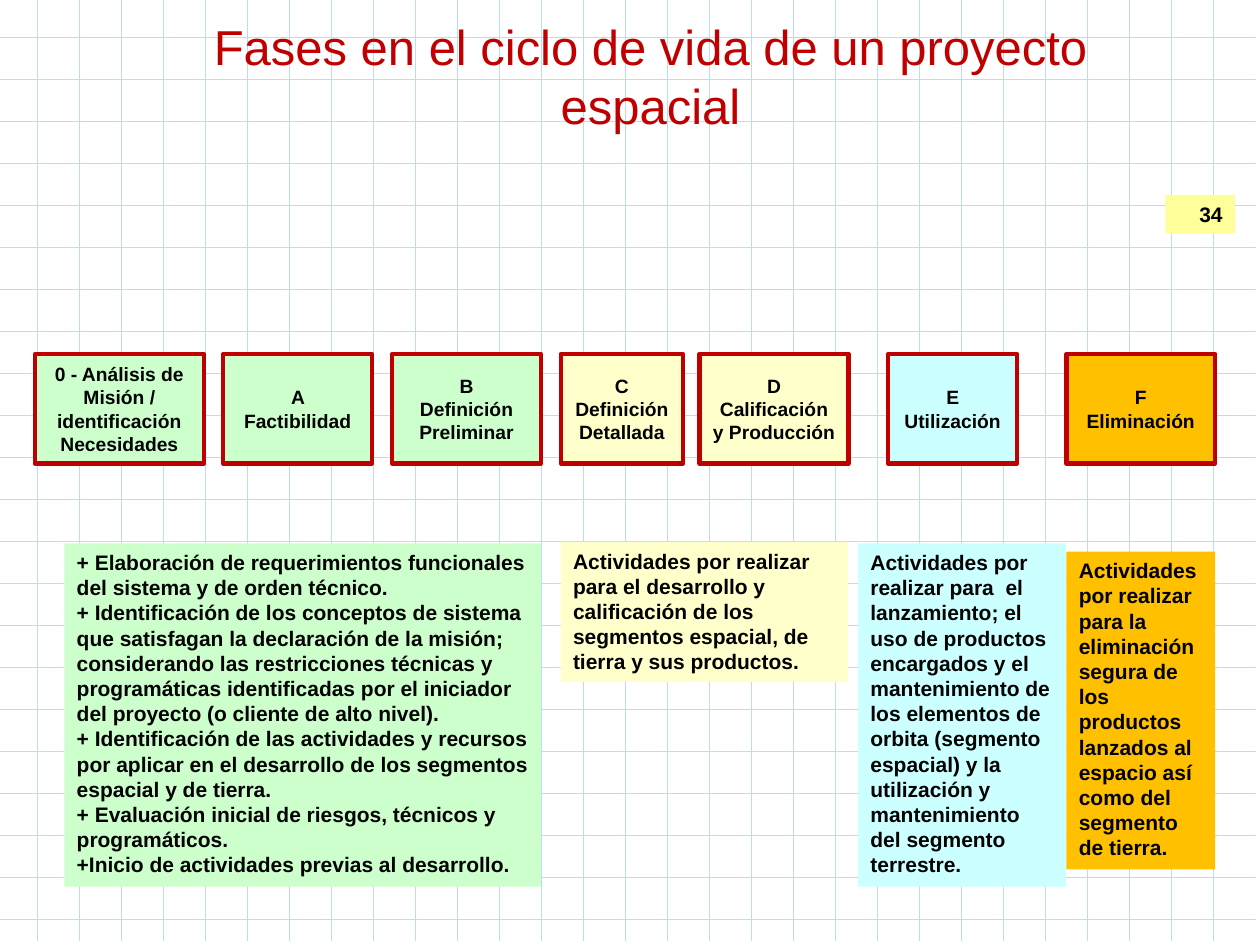
from pptx import Presentation
from pptx.dml.color import RGBColor
from pptx.enum import dml, shapes, text
from pptx.oxml.ns import qn
from pptx.util import Pt
from lxml import etree

WIDTH, HEIGHT = 720, 540
GREEN, CREAM, CYAN, ORANGE = "CCFFCC", "FFFFCC", "CCFFFF", "FFC000"
RED, BLACK, YELLOW, GRID = "C00000", "000000", "FFFF99", "BBE0E3"

TITLE = "Fases en el ciclo de vida de un proyecto espacial"
PAGE = "34"

# Phases: left, width, fill, paragraphs
PHASE_TOP, PHASE_HEIGHT = 202.3, 62.6
PHASES = [
    (20, 96.5, GREEN, ["0 ‐ Análisis de Misión / identificación Necesidades"]),
    (127.6, 85, GREEN, ["A Factibilidad"]),
    (224.1, 85, GREEN, ["B", "Definición Preliminar"]),
    (320.4, 70, CREAM, ["C Definición Detallada"]),
    (399.8, 85, CREAM, ["D Calificación y Producción"]),
    (507.6, 73.7, CYAN, ["E Utilización"]),
    (609.4, 85, ORANGE, ["F Eliminación"]),
]

# Activities: left, top, width, height, fill, paragraphs
ACTIVITIES = [
    (36.8, 310.5, 272.3, 196.2, GREEN, [
        "+ Elaboración de requerimientos funcionales del sistema y de orden técnico.",
        "+ Identificación de los conceptos de sistema que satisfagan la declaración "
        "de la misión; considerando las restricciones técnicas y programáticas "
        "identificadas por el iniciador del proyecto (o cliente de alto nivel).",
        "+ Identificación de las actividades y recursos por aplicar en el desarrollo "
        "de los segmentos espacial y de tierra.",
        "+ Evaluación inicial de riesgos, técnicos y programáticos.",
        "+Inicio de actividades previas al desarrollo.",
    ]),
    (320.4, 309.7, 164.3, 79.9, CREAM, [
        "Actividades por realizar para el desarrollo y calificación de los segmentos "
        "espacial, de tierra y sus productos.",
    ]),
    (490.3, 310.5, 118.8, 196.2, CYAN, [
        "Actividades por realizar para  el lanzamiento; el uso de productos encargados "
        "y el mantenimiento de los elementos de orbita (segmento espacial) y la "
        "utilización y mantenimiento del segmento terrestre.",
    ]),
    (609.4, 315.2, 85, 181.6, ORANGE, [
        "Actividades por realizar para la eliminación segura de los productos lanzados "
        "al espacio así como del segmento de tierra.",
    ]),
]

# Grid: first line, step and overhang to the upper left
GRID_START, GRID_STEP, GRID_SHIFT = 21.4, 24, -2.6

prs = Presentation()
prs.slide_width, prs.slide_height = Pt(WIDTH), Pt(HEIGHT)
s = prs.slides.add_slide(prs.slide_layouts[6])


def rgb(value):
    return RGBColor.from_string(value)


def write(sp, lines, size, color=BLACK, bold=True, align="LEFT", anchor="TOP"):
    tf = sp.text_frame
    tf.word_wrap = True
    tf.vertical_anchor = getattr(text.MSO_ANCHOR, anchor)
    for i, line in enumerate(lines):
        p = tf.paragraphs[0] if i == 0 else tf.add_paragraph()
        p.alignment = getattr(text.PP_ALIGN, align)
        r = p.add_run()
        r.text = line
        for name, value in {"name": "Arial", "size": Pt(size), "bold": bold}.items():
            setattr(r.font, name, value)
        r.font.color.rgb = rgb(color)


def add_box(kind, left, top, width, height, fill, border=None):
    sp = s.shapes.add_shape(kind, Pt(left), Pt(top), Pt(width), Pt(height))
    sp.shadow.inherit = False
    sp.fill.solid()
    sp.fill.fore_color.rgb = rgb(fill)
    if border:
        sp.line.color.rgb = rgb(border)
        sp.line.width = Pt(2.5)
    else:
        sp.line.fill.background()
    return sp


def add_grid_line(x1, y1, x2, y2):
    c = s.shapes.add_connector(shapes.MSO_CONNECTOR.STRAIGHT,
                               Pt(x1), Pt(y1), Pt(x2), Pt(y2))
    c.line.color.rgb = rgb(GRID)
    c.line.width = Pt(0.25)
    c.line.dash_style = dml.MSO_LINE.ROUND_DOT
    etree.SubElement(c._element.spPr, qn("a:effectLst"))


# Background grid
for row in range(22):
    y = GRID_START + row * GRID_STEP
    add_grid_line(GRID_SHIFT, y, WIDTH + GRID_SHIFT, y)
for col in range(29):
    x = GRID_START + col * GRID_STEP
    add_grid_line(x, GRID_SHIFT, x, HEIGHT + GRID_SHIFT)

# Title and page number
title = s.shapes.add_textbox(Pt(105.3), Pt(9.4), Pt(532.8), Pt(67))
write(title, [TITLE], 28, RED, bold=False, align="CENTER", anchor="MIDDLE")
page = add_box(shapes.MSO_SHAPE.RECTANGLE, 666, 111.4, 39.8, 22.2, YELLOW)
write(page, [PAGE], 12, align="RIGHT")

# Phase boxes
for left, width, fill, lines in PHASES:
    sp = add_box(shapes.MSO_SHAPE.FLOWCHART_PROCESS, left, PHASE_TOP, width,
                 PHASE_HEIGHT, fill, RED)
    write(sp, lines, 11, align="CENTER", anchor="MIDDLE")

# Activity panels
for left, top, width, height, fill, lines in ACTIVITIES:
    sp = add_box(shapes.MSO_SHAPE.RECTANGLE, left, top, width, height, fill)
    write(sp, lines, 12)
    sp.text_frame.auto_size = text.MSO_AUTO_SIZE.SHAPE_TO_FIT_TEXT

prs.save("out.pptx")
